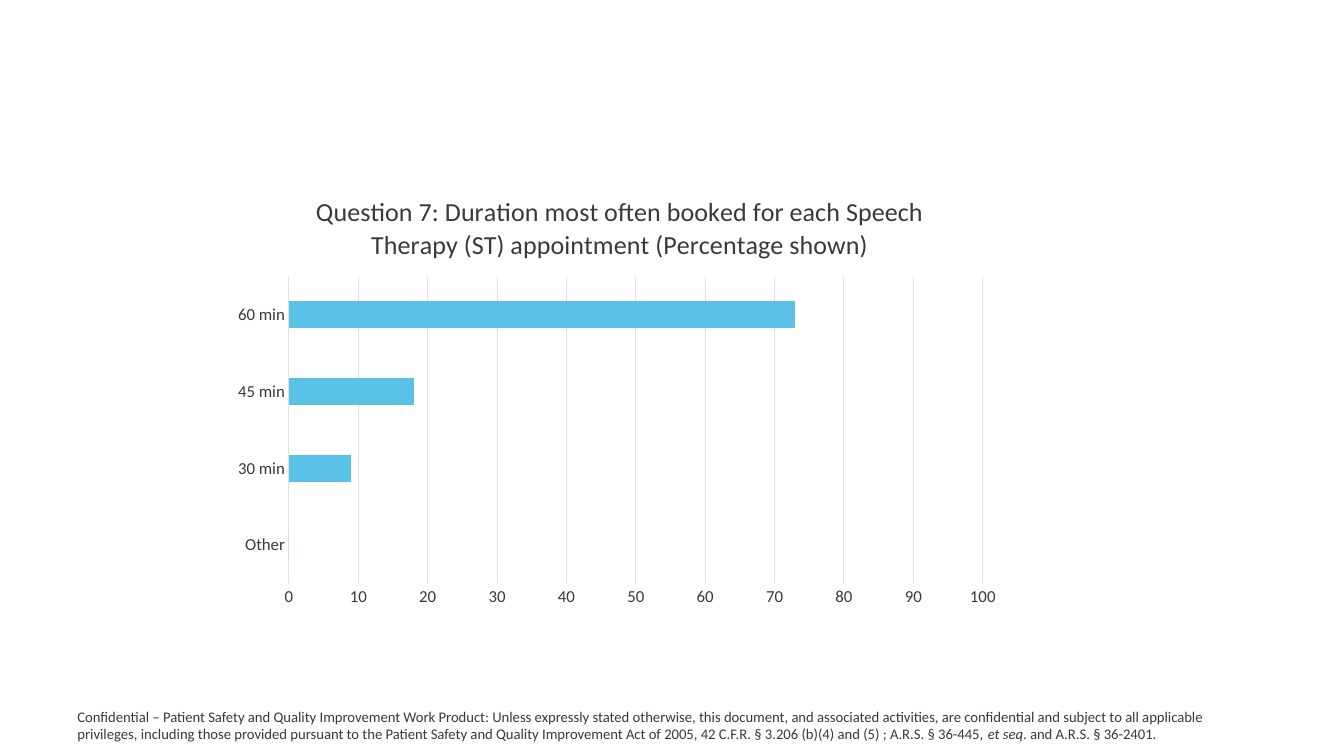
from lxml.etree import SubElement
from pptx import Presentation
from pptx.chart.data import CategoryChartData
from pptx.dml.color import RGBColor
from pptx.enum.chart import XL_CHART_TYPE, XL_TICK_MARK
from pptx.oxml import parse_xml
from pptx.oxml.ns import nsdecls, qn
from pptx.util import Inches, Pt

TEXT = RGBColor(0x3C, 0x38, 0x34)
GRID = RGBColor(0xE3, 0xE1, 0xDF)
BAR = RGBColor(0x5B, 0xC2, 0xE7)
FONT = "Calibri"

TITLE = ("Question 7: Duration most often booked for each Speech "
         "Therapy (ST) appointment (Percentage shown)")
DURATIONS = {"Other": 0, "30 min": 9, "45 min": 18, "60 min": 73}
NOTICE = [
    ("Confidential – Patient Safety and Quality Improvement Work Product: "
     "Unless expressly stated otherwise, this document, and associated "
     "activities, are confidential and subject to all applicable privileges, "
     "including those provided pursuant to the Patient Safety and Quality "
     "Improvement Act of 2005, 42 C.F.R. § 3.206 (b)(4) and (5) ; "
     "A.R.S. § 36-445, ", False),
    ("et seq", True),
    (". and A.R.S. § 36-2401.", False),
]


def set_font(font, size):
    """Apply the slide's typeface and text colour."""
    font.name = FONT
    font.size = Pt(size)
    font.color.rgb = TEXT


def set_line(line):
    """Draw a thin pale rule."""
    line.color.rgb = GRID
    line.width = Pt(0.75)


def set_plot_layout(chart, x, y, w, h):
    """Place the inner plot area by fractions of the chart."""
    plot_area = chart._chartSpace.chart.plotArea
    for old in plot_area.findall(qn("c:layout")):
        plot_area.remove(old)
    layout = parse_xml(f"<c:layout {nsdecls('c')}/>")
    manual = SubElement(layout, qn("c:manualLayout"))
    settings = {"layoutTarget": "inner", "xMode": "edge", "yMode": "edge",
                "x": x, "y": y, "w": w, "h": h}
    for tag, value in settings.items():
        SubElement(manual, qn(f"c:{tag}")).set("val", str(value))
    plot_area.insert(0, layout)


def style_axis(axis):
    """Set axis labels and remove tick marks."""
    set_font(axis.tick_labels.font, 12)
    axis.major_tick_mark = XL_TICK_MARK.NONE
    axis.minor_tick_mark = XL_TICK_MARK.NONE


def add_duration_chart(s):
    """Add the bar chart of appointment durations."""
    data = CategoryChartData()
    data.categories = list(DURATIONS)
    data.add_series("Series 1", list(DURATIONS.values()))
    chart = s.shapes.add_chart(
        XL_CHART_TYPE.BAR_CLUSTERED, Inches(2.24), Inches(1.73),
        Inches(7.82), Inches(4.41), data).chart
    set_font(chart.font, 10)
    chart.has_legend = False
    chart.has_title = True
    p = chart.chart_title.text_frame.paragraphs[0]
    p.text = TITLE
    set_font(p.font, 18.6)
    p.font.bold = False
    chart.chart_title.include_in_layout = False

    style_axis(chart.category_axis)
    set_line(chart.category_axis.format.line)
    values = chart.value_axis
    style_axis(values)
    values.format.line.fill.background()
    values.minimum_scale = 0
    values.maximum_scale = 100
    values.major_unit = 10
    set_line(values.major_gridlines.format.line)

    plot = chart.plots[0]
    plot.gap_width = 182
    plot.vary_by_categories = False
    fill = plot.series[0].format.fill
    fill.solid()
    fill.fore_color.rgb = BAR
    set_plot_layout(chart, 0.08, 0.23, 0.88, 0.69)


def add_notice(s):
    """Add the confidentiality notice."""
    tf = s.shapes.add_textbox(
        Inches(0.67), Inches(6.97), Inches(11.73), Inches(0.45)).text_frame
    tf.word_wrap = True
    p = tf.paragraphs[0]
    set_font(p.font, 10.5)
    for text, italic in NOTICE:
        r = p.add_run()
        r.text = text
        if italic:
            r.font.italic = True


def main():
    """Build and save the slide."""
    prs = Presentation()
    prs.slide_width = Inches(13.33)
    prs.slide_height = Inches(7.5)
    s = prs.slides.add_slide(prs.slide_layouts[6])
    add_duration_chart(s)
    add_notice(s)
    prs.save("out.pptx")


if __name__ == "__main__":
    main()
